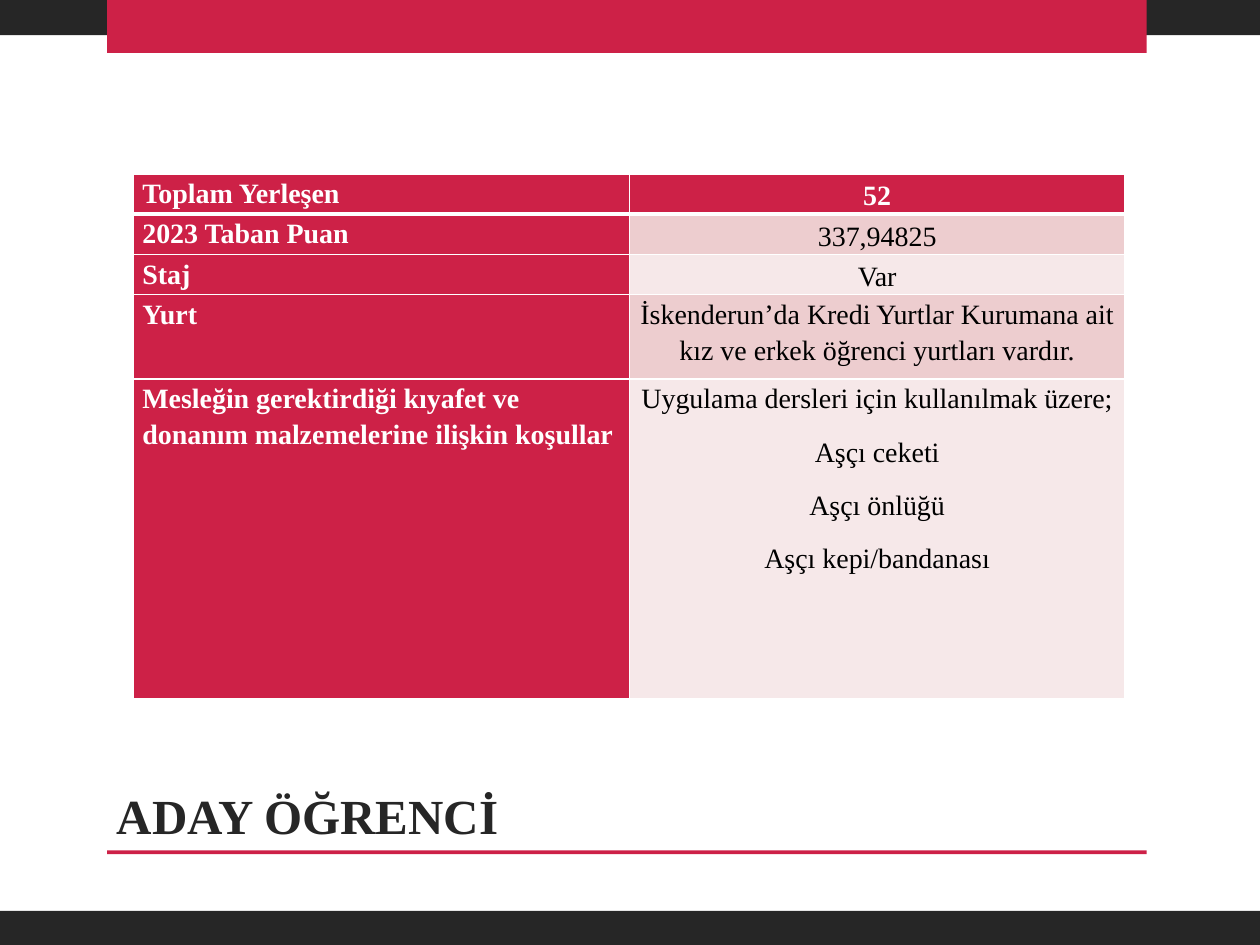
"""Build the candidate student slide with its table of programme facts."""
from dataclasses import dataclass

import lxml.etree
import pptx
import pptx.dml.color
import pptx.enum.shapes
import pptx.enum.text
import pptx.oxml.ns
import pptx.util

Inches = pptx.util.Inches
Pt = pptx.util.Pt
RGBColor = pptx.dml.color.RGBColor
Align = pptx.enum.text.PP_ALIGN
Anchor = pptx.enum.text.MSO_ANCHOR

CRIMSON = RGBColor(0xCD, 0x21, 0x47)
CHARCOAL = RGBColor(0x26, 0x26, 0x26)
WHITE = RGBColor(0xFF, 0xFF, 0xFF)
BLACK = RGBColor(0x00, 0x00, 0x00)
ROSE = RGBColor(0xED, 0xCD, 0xCF)
PALE_ROSE = RGBColor(0xF6, 0xE8, 0xE9)
FONT = "Times New Roman"


@dataclass(frozen=True)
class Bar:
    left: float
    top: float
    width: float
    height: float
    color: RGBColor


@dataclass(frozen=True)
class Fact:
    label: str
    values: tuple[str, ...]
    height: float
    anchor: Anchor = Anchor.TOP


BARS = (
    Bar(0, 0, 10, 0.28, CHARCOAL),
    Bar(0.85, 0, 8.25, 0.42, CRIMSON),
    Bar(0.85, 6.75, 8.25, 0.03, CRIMSON),
    Bar(0, 7.23, 10, 0.27, CHARCOAL),
)

FACTS = (
    Fact("Toplam Yerleşen", ("52",), 0.32, Anchor.MIDDLE),
    Fact("2023 Taban Puan", ("337,94825",), 0.32, Anchor.MIDDLE),
    Fact("Staj", ("Var",), 0.32, Anchor.MIDDLE),
    Fact(
        "Yurt",
        ("İskenderun’da Kredi Yurtlar Kurumana ait kız ve erkek öğrenci yurtları vardır.",),
        0.67,
    ),
    Fact(
        "Mesleğin gerektirdiği kıyafet ve donanım malzemelerine ilişkin koşullar",
        (
            "Uygulama dersleri için kullanılmak üzere;",
            "Aşçı ceketi",
            "Aşçı önlüğü",
            "Aşçı kepi/bandanası",
        ),
        2.54,
    ),
)


def write_text(frame, *lines: str, size: float, color: RGBColor, bold: bool = False,
               align: Align = Align.LEFT, spacing: float = 1.0, after: float = 0) -> None:
    for index, line in enumerate(lines):
        para = frame.paragraphs[0] if index == 0 else frame.add_paragraph()
        para.alignment = align
        para.line_spacing = spacing
        para.space_after = Pt(after)
        span = para.add_run()
        span.text = line
        span.font.name = FONT
        span.font.size = Pt(size)
        span.font.bold = bold
        span.font.color.rgb = color


def draw_bar(page, bar: Bar) -> None:
    shape = page.shapes.add_shape(
        pptx.enum.shapes.MSO_SHAPE.RECTANGLE,
        Inches(bar.left), Inches(bar.top), Inches(bar.width), Inches(bar.height))
    shape.shadow.inherit = False
    shape.fill.solid()
    shape.fill.fore_color.rgb = bar.color
    shape.line.fill.background()


def draw_title(page, text: str) -> None:
    box = page.shapes.add_textbox(Inches(0.83), Inches(5.95), Inches(8.58), Inches(0.8))
    box.text_frame.word_wrap = True
    box.text_frame.vertical_anchor = Anchor.BOTTOM
    write_text(box.text_frame, text, size=28, color=CHARCOAL, bold=True)


def set_borders(cell, **widths: float) -> None:
    name = pptx.oxml.ns.qn
    properties = cell._tc.get_or_add_tcPr()
    for side in ("L", "R", "T", "B"):
        line = lxml.etree.SubElement(
            properties, name(f"a:ln{side}"), w=str(Pt(widths.get(side, 1))))
        fill = lxml.etree.SubElement(line, name("a:solidFill"))
        lxml.etree.SubElement(fill, name("a:srgbClr"), val=str(WHITE))


def fill_cell(cell, *lines: str, fill: RGBColor, color: RGBColor, bold: bool,
              align: Align, anchor: Anchor, bottom: float, top: float) -> None:
    set_borders(cell, B=bottom, T=top)
    cell.fill.solid()
    cell.fill.fore_color.rgb = fill
    cell.margin_left = cell.margin_right = Inches(0.07)
    cell.margin_top = cell.margin_bottom = Inches(0)
    cell.vertical_anchor = anchor
    write_text(cell.text_frame, *lines, size=16, color=color, bold=bold,
               align=align, spacing=1.15, after=10)


def draw_facts(page, facts: tuple[Fact, ...]) -> None:
    height = sum(fact.height for fact in facts)
    table = page.shapes.add_table(
        len(facts), 2, Inches(1.06), Inches(1.38), Inches(7.87), Inches(height)).table
    for index, fact in enumerate(facts):
        header = index == 0
        table.rows[index].height = Inches(fact.height)
        bottom = 3 if header else 1
        top = 3 if index == 1 else 1
        value_fill = CRIMSON if header else (ROSE if index % 2 else PALE_ROSE)
        fill_cell(table.cell(index, 0), fact.label, fill=CRIMSON, color=WHITE, bold=True,
                  align=Align.LEFT, anchor=Anchor.TOP, bottom=bottom, top=top)
        fill_cell(table.cell(index, 1), *fact.values, fill=value_fill,
                  color=WHITE if header else BLACK, bold=header,
                  align=Align.CENTER, anchor=fact.anchor, bottom=bottom, top=top)


def main() -> None:
    deck = pptx.Presentation()
    deck.slide_width = Inches(10)
    deck.slide_height = Inches(7.5)
    page = deck.slides.add_slide(deck.slide_layouts[6])
    for bar in BARS:
        draw_bar(page, bar)
    draw_title(page, "ADAY ÖĞRENCİ")
    draw_facts(page, FACTS)
    deck.save("out.pptx")


if __name__ == "__main__":
    main()
